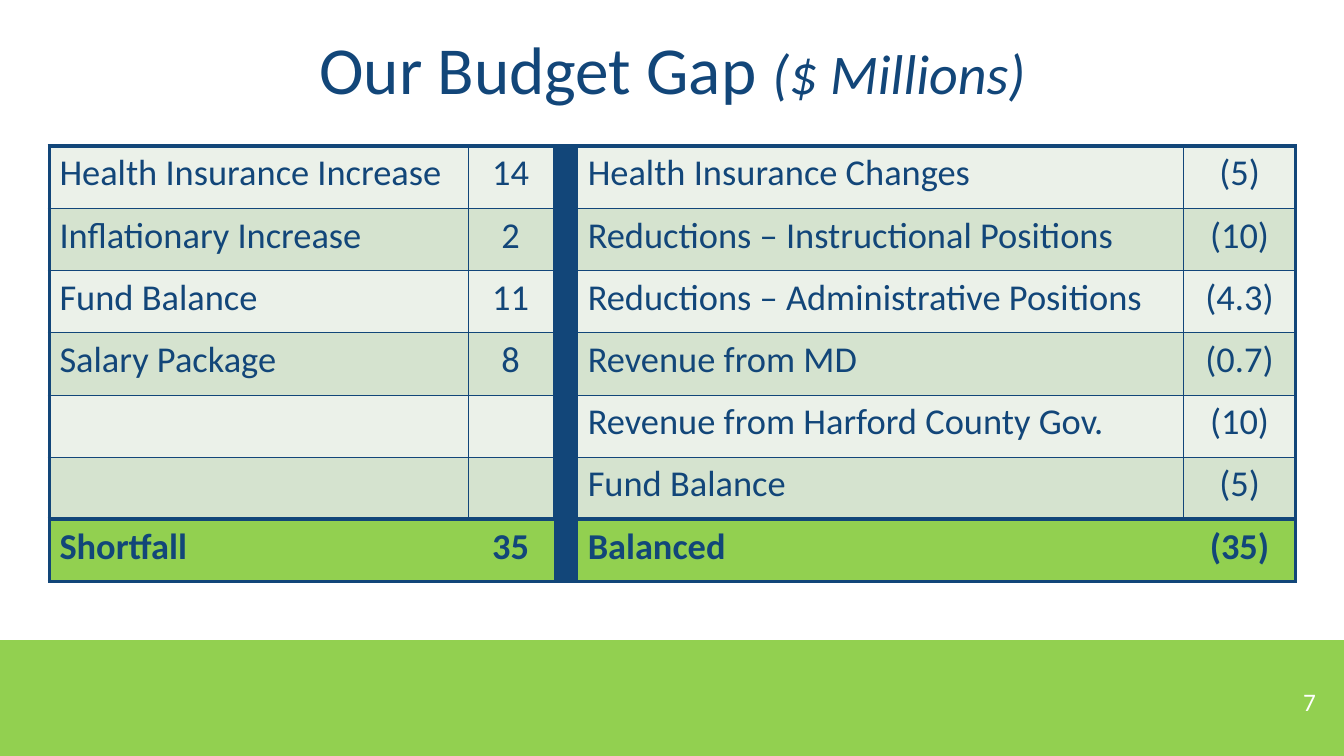
from dataclasses import dataclass
from lxml.etree import SubElement
from pptx import Presentation
from pptx.dml.color import RGBColor
from pptx.enum.shapes import MSO_SHAPE
from pptx.enum.text import MSO_ANCHOR, PP_ALIGN
from pptx.oxml.ns import qn
from pptx.util import Inches, Pt


@dataclass(frozen=True)
class Theme:
    font: str = "Calibri"
    navy: str = "124679"
    green: str = "92D050"
    white: str = "FFFFFF"
    bands: tuple = ("EBF1E9", "D5E3CF")
    title: int = 48
    unit: int = 40
    body: int = 26
    page: int = 18
    thin: float = 0.5
    thick: float = 3


class Deck:
    def __init__(self, theme):
        self.theme = theme
        self.prs = Presentation()
        self.prs.slide_width = Inches(13.33)
        self.prs.slide_height = Inches(7.5)
        self.slide = self.prs.slides.add_slide(self.prs.slide_layouts[5])

    def label(self, para, text, size, color, bold=False, italic=False):
        run = para.add_run()
        run.text = text
        font = run.font
        font.name = self.theme.font
        font.size = Pt(size)
        font.bold = bold
        font.italic = italic
        font.color.rgb = RGBColor.from_string(color)

    def title(self, box, text, unit):
        shape = self.slide.shapes.title
        shape.left, shape.top, shape.width, shape.height = map(Inches, box)
        frame = shape.text_frame
        frame.vertical_anchor = MSO_ANCHOR.MIDDLE
        para = frame.paragraphs[0]
        para.alignment = PP_ALIGN.CENTER
        para.line_spacing = 0.9
        self.label(para, text, self.theme.title, self.theme.navy)
        self.label(para, unit, self.theme.unit, self.theme.navy, italic=True)

    def band(self, box, color):
        shape = self.slide.shapes.add_shape(MSO_SHAPE.RECTANGLE, *map(Inches, box))
        shape.shadow.inherit = False
        shape.fill.solid()
        shape.fill.fore_color.rgb = RGBColor.from_string(color)
        shape.line.fill.background()

    def page(self, box, text):
        frame = self.slide.shapes.add_textbox(*map(Inches, box)).text_frame
        frame.word_wrap = True
        frame.vertical_anchor = MSO_ANCHOR.MIDDLE
        para = frame.paragraphs[0]
        para.alignment = PP_ALIGN.RIGHT
        self.label(para, text, self.theme.page, self.theme.white)

    def edge(self, cell, side, width):
        props = cell._tc.get_or_add_tcPr()
        line = SubElement(props, qn("a:ln" + side), w=str(Pt(width)))
        if width:
            fill = SubElement(line, qn("a:solidFill"))
            SubElement(fill, qn("a:srgbClr"), val=self.theme.navy)
        else:
            SubElement(line, qn("a:noFill"))

    def cell(self, cell, text, fill, edges, center, bold):
        for side, width in edges.items():
            self.edge(cell, side, width)
        cell.fill.solid()
        cell.fill.fore_color.rgb = RGBColor.from_string(fill)
        para = cell.text_frame.paragraphs[0]
        if center:
            para.alignment = PP_ALIGN.CENTER
        if text:
            self.label(para, text, self.theme.body, self.theme.navy, bold)

    def ledger(self, box, widths, rows):
        theme = self.theme
        count, last = len(rows), len(widths) - 1
        table = self.slide.shapes.add_table(count, last + 1, *map(Inches, box)).table
        for col, width in zip(table.columns, widths):
            col.width = Inches(width)
        for r, row in enumerate(rows):
            total = r == count - 1
            inner = 0 if total else theme.thin
            top = theme.thick if r == 0 or total else theme.thin
            base = theme.thick if r >= count - 2 else theme.thin
            shade = theme.green if total else theme.bands[r % 2]
            for c, text in enumerate(row):
                edges = {
                    "L": theme.thick if c == 0 else inner,
                    "R": theme.thick if c == last else inner,
                    "T": top,
                    "B": base,
                }
                fill = theme.navy if c == 2 else shade
                self.cell(table.cell(r, c), text, fill, edges, c in (1, 4), total)

    def save(self):
        self.prs.save("out.pptx")


def main():
    theme = Theme()
    deck = Deck(theme)
    deck.band((0, 6.35, 13.33, 1.15), theme.green)
    deck.title((0.92, 0, 11.5, 1.45), "Our Budget Gap ", "($ Millions)")
    rows = [
        ("Health Insurance Increase", "14", "", "Health Insurance Changes", "(5)"),
        ("Inflationary Increase", "2", "", "Reductions – Instructional Positions", "(10)"),
        ("Fund Balance", "11", "", "Reductions – Administrative Positions", "(4.3)"),
        ("Salary Package", "8", "", "Revenue from MD", "(0.7)"),
        ("", "", "", "Revenue from Harford County Gov.", "(10)"),
        ("", "", "", "Fund Balance", "(5)"),
        ("Shortfall", "35", "", "Balanced", "(35)"),
    ]
    deck.ledger((0.49, 1.45, 12.35, 4.32), (4.15, 0.85, 0.23, 6.01, 1.11), rows)
    deck.page((10.15, 6.76, 3, 0.4), "7")
    deck.save()


if __name__ == "__main__":
    main()
